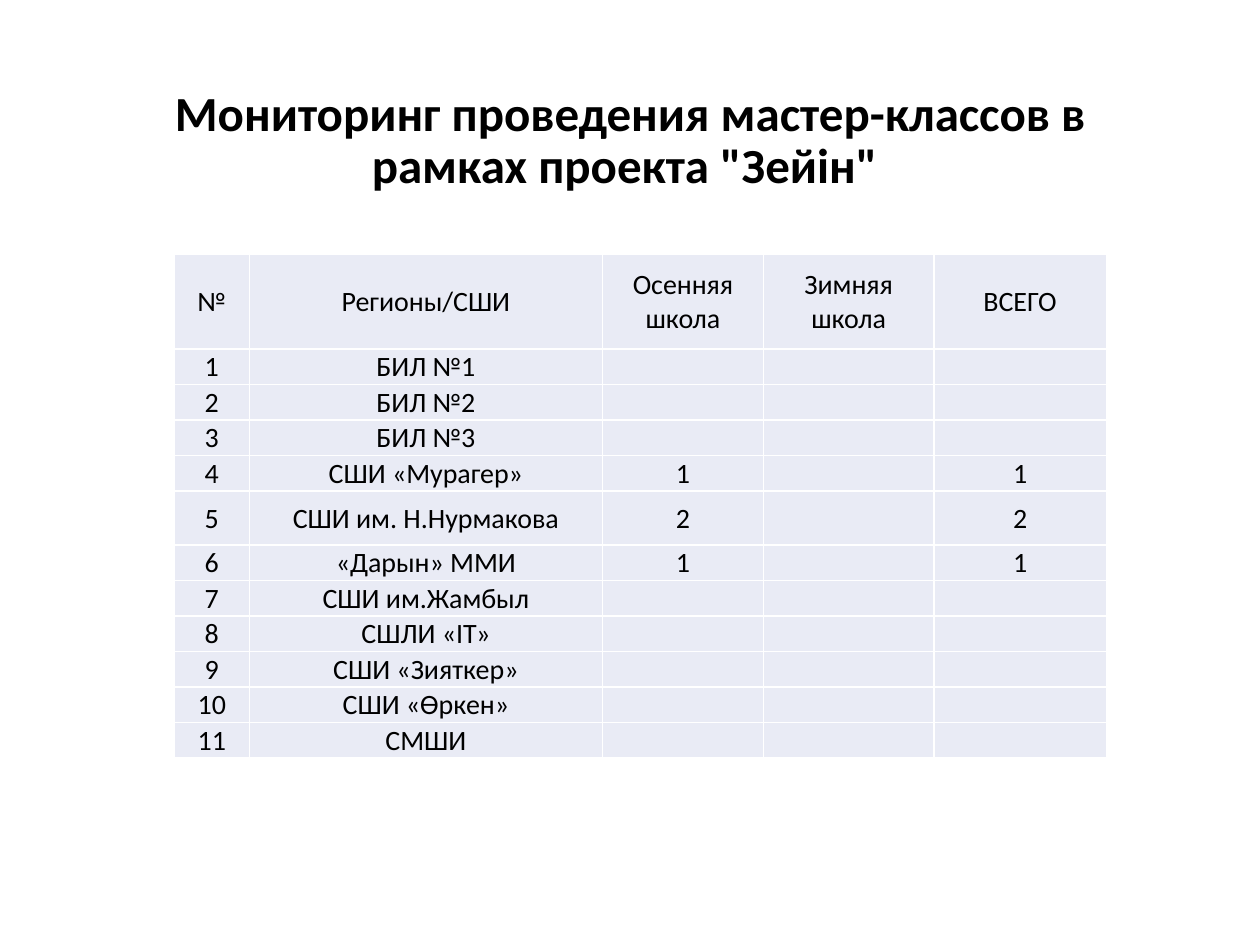
from lxml import etree
from pptx import Presentation
from pptx.dml.color import RGBColor
from pptx.enum import text
from pptx.oxml import parse_xml
from pptx.oxml.ns import nsdecls, qn
from pptx.util import Pt

FONT = "Calibri"
TEXT_SIZE = 16
COLUMN_WIDTHS = [43.2, 201.6, 92.2, 97.2, 98.6]
HEADER_HEIGHT, ROW_HEIGHT, TALL_HEIGHT = 54, 18, 31
TALL_ROW = 5
HEADERS = ["№", "Регионы/СШИ", "Осенняя школа", "Зимняя школа", "ВСЕГО"]
SCHOOLS = [
    ("БИЛ №1", ""),
    ("БИЛ №2", ""),
    ("БИЛ №3", ""),
    ("СШИ «Мурагер»", "1"),
    ("СШИ им. Н.Нурмакова", "2"),
    ("«Дарын» ММИ", "1"),
    ("СШИ им.Жамбыл", ""),
    ("СШЛИ «ІТ»", ""),
    ("СШИ «Зияткер»", ""),
    ("СШИ «Өркен»", ""),
    ("СМШИ", ""),
]


def rgb(value):
    return RGBColor.from_string(value)


def add_run(p, words, size, bold=False):
    r = p.add_run()
    r.text = words
    r.font.name = FONT
    r.font.size = Pt(size)
    r.font.bold = bold
    r.font.color.rgb = rgb("000000")


def add_title(slide, left, top, width, height):
    sp = slide.shapes.title
    sp.left, sp.top, sp.width, sp.height = Pt(left), Pt(top), Pt(width), Pt(height)
    tf = sp.text_frame
    tf.word_wrap = True
    tf.auto_size = text.MSO_AUTO_SIZE.NONE
    tf.vertical_anchor = text.MSO_ANCHOR.MIDDLE
    p = tf.paragraphs[0]
    p.alignment = text.PP_ALIGN.CENTER
    p.line_spacing = 0.9
    add_run(p, 'Мониторинг проведения мастер-классов в рамках проекта "Зейін" ', 28, True)


def set_borders(cell, color, width):
    tc_pr = cell._tc.get_or_add_tcPr()
    for i, side in enumerate(("lnL", "lnR", "lnT", "lnB")):
        tc_pr.insert(i, parse_xml(
            f'<a:{side} {nsdecls("a")} w="{Pt(width)}"><a:solidFill>'
            f'<a:srgbClr val="{color}"/></a:solidFill></a:{side}>'))


def fill_cell(cell, words):
    cell.fill.solid()
    cell.fill.fore_color.rgb = rgb("E9EBF5")
    set_borders(cell, "FFFFFF", 1)
    cell.margin_left = cell.margin_right = cell.margin_top = Pt(0.7)
    cell.margin_bottom = 0
    cell.vertical_anchor = text.MSO_ANCHOR.MIDDLE
    p = cell.text_frame.paragraphs[0]
    p.alignment = text.PP_ALIGN.CENTER
    if words:
        add_run(p, words, TEXT_SIZE)
    else:
        # An empty cell keeps its row low only with an explicit text size
        etree.SubElement(p._p, qn("a:endParaRPr"), sz=str(TEXT_SIZE * 100))


def add_monitoring_table(slide, left, top):
    rows = [HEADERS] + [[str(n), school, autumn, "", autumn]
                        for n, (school, autumn) in enumerate(SCHOOLS, 1)]
    heights = [HEADER_HEIGHT] + [ROW_HEIGHT] * len(SCHOOLS)
    heights[TALL_ROW] = TALL_HEIGHT
    table = slide.shapes.add_table(
        len(rows), len(HEADERS), Pt(left), Pt(top),
        Pt(sum(COLUMN_WIDTHS)), Pt(sum(heights))).table
    table.first_row = table.horz_banding = False
    for column, width in zip(table.columns, COLUMN_WIDTHS):
        column.width = Pt(width)
    for row, height, values in zip(table.rows, heights, rows):
        row.height = Pt(height)
        for cell, words in zip(row.cells, values):
            fill_cell(cell, words)


def main():
    prs = Presentation()
    prs.slide_width, prs.slide_height = Pt(720), Pt(540)
    slide = prs.slides.add_slide(prs.slide_layouts[5])
    add_title(slide, 49.5, 28.75, 621, 104.4)
    add_monitoring_table(slide, 99.4, 145.4)
    prs.save("out.pptx")


if __name__ == "__main__":
    main()
